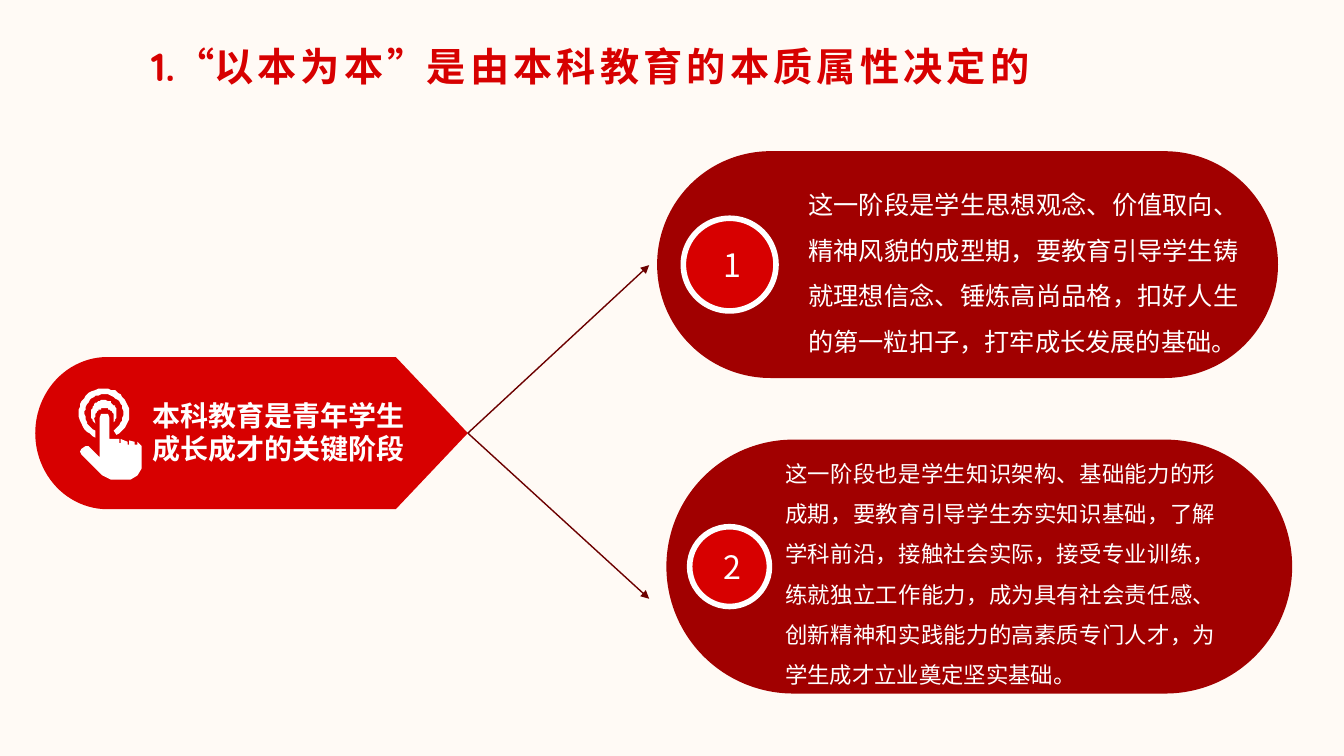
from math import cos, radians, sin

from lxml import etree
from pptx import Presentation
from pptx.dml.color import RGBColor
from pptx.enum import lang, shapes, text
from pptx.oxml import ns
from pptx.util import Pt

RED = RGBColor(0xD7, 0x00, 0x00)
DARK = RGBColor(0xA1, 0x00, 0x00)
WINE = RGBColor(0x6C, 0x00, 0x00)
WHITE = RGBColor(0xFF, 0xFF, 0xFF)
CREAM = RGBColor(0xFF, 0xFA, 0xF5)
SANS = "Noto Sans CJK SC"

FIRST = "这一阶段是学生思想观念、价值取向、精神风貌的成型期，要教育引导学生铸就理想信念、锤炼高尚品格，扣好人生的第一粒扣子，打牢成长发展的基础。"
SECOND = "这一阶段也是学生知识架构、基础能力的形成期，要教育引导学生夯实知识基础，了解学科前沿，接触社会实际，接受专业训练，练就独立工作能力，成为具有社会责任感、创新精神和实践能力的高素质专门人才，为学生成才立业奠定坚实基础。"

HAND = [
    (44.6, 42.5), (44.6, 57.6), (42.5, 63.4), (36.7, 65.5), (23, 65.5),
    (17.3, 62.6), (2.2, 48.2), (1.1, 46), (2.2, 43.9), (5, 41.8),
    (7.2, 42.5), (15.1, 50.4), (15.1, 21.6), (15.8, 19.4), (18, 18.7),
    (18.7, 18.7), (20.9, 19.4), (21.6, 21.6), (21.6, 37.4), (28.8, 37.4),
    (28.8, 40.3), (29.5, 40.3), (29.5, 37.4), (34.6, 38.9), (34.6, 41),
    (36, 41), (36, 38.2), (40.3, 38.9), (40.3, 41), (41.8, 41), (41.8, 38.9),
]


def style(para, size, color, bold=False, name=SANS, gap=0):
    font = para.font
    font.size, font.bold, font.name = Pt(size), bold, name
    font.color.rgb = color
    props = font._rPr
    if gap:
        props.set("spc", str(gap))
    etree.SubElement(props, ns.qn("a:ea")).set("typeface", SANS)


def inset(frame, left, right):
    frame.margin_left, frame.margin_right = Pt(left), Pt(right)
    frame.vertical_anchor = text.MSO_ANCHOR.MIDDLE


def paint(shape, fill, line=None):
    shape.shadow.inherit = False
    shape.fill.solid()
    shape.fill.fore_color.rgb = fill
    if line is None:
        shape.line.fill.background()
    else:
        shape.line.color.rgb = line
        shape.line.width = Pt(4)


def add_form(slide, kind, box, fill, line=None):
    form = slide.shapes.add_shape(kind, *map(Pt, box))
    paint(form, fill, line)
    return form


def arc(mid, rad, start, end, steps=40):
    turns = [radians(start + (end - start) * i / steps) for i in range(steps + 1)]
    return [(mid[0] + rad * cos(t), mid[1] + rad * sin(t)) for t in turns]


def add_title(slide, box):
    title = slide.shapes.title
    title.left, title.top, title.width, title.height = map(Pt, box)
    frame = title.text_frame
    frame.auto_size = text.MSO_AUTO_SIZE.NONE
    frame.word_wrap = True
    inset(frame, 7.2, 7.2)
    para = frame.paragraphs[0]
    para.alignment = text.PP_ALIGN.LEFT
    style(para, 28, RED, True, "Quicksand")
    parts = [("1.“", 0), ("以本为本", 300), ("”", 0), ("是由本科教育的本质属性决定的", 300)]
    for words, gap in parts:
        run = para.add_run()
        run.text = words
        run.font.language_id = lang.MSO_LANGUAGE_ID.SIMPLIFIED_CHINESE
        run.font._rPr.set("spc", str(gap))


def add_icon(slide, left, top):
    mid = (18, 18.7)
    inner = arc(mid, 9.4, 132, 399) + arc((18.4, 21.9), 6.9, 360, 180)
    outer = arc(mid, 18, 110, 419) + arc(mid, 13.7, 420, 117)
    pen = slide.shapes.build_freeform(*HAND[0], scale=Pt(1))
    pen.add_line_segments(HAND[1:])
    for ring in (inner, outer):
        pen.move_to(*ring[0])
        pen.add_line_segments(ring[1:])
    paint(pen.convert_to_shape(Pt(left), Pt(top)), WHITE)


def add_topic(slide, box):
    left, top, wide, high = box
    form = add_form(slide, shapes.MSO_SHAPE.FLOWCHART_DISPLAY, box, RED)
    form._element.spPr.xfrm.set("flipH", "1")
    add_icon(slide, left + 31, top + 21.6)
    label = slide.shapes.add_textbox(Pt(left + 75.6), Pt(top + 26), Pt(196.6), Pt(55.4))
    frame = label.text_frame
    frame.word_wrap = False
    frame.text = "本科教育是青年学生\n成长成才的关键阶段"
    for para in frame.paragraphs:
        para.alignment = text.PP_ALIGN.CENTER
        style(para, 20, WHITE, True)


def add_arrow(slide, start, end):
    line = slide.shapes.add_connector(shapes.MSO_CONNECTOR.STRAIGHT, *map(Pt, start + end))
    line.line.color.rgb = WINE
    line.line.width = Pt(1)
    etree.SubElement(line.line._get_or_add_ln(), ns.qn("a:tailEnd")).set("type", "triangle")
    etree.SubElement(line._element.spPr, ns.qn("a:effectLst"))


def add_point(slide, box, mark, words, size, disc, shift, indent):
    left, top, wide, high = box
    pill = add_form(slide, shapes.MSO_SHAPE.ROUNDED_RECTANGLE, box, DARK)
    pill.adjustments[0] = 0.5
    spot = (left + shift, top + (high - disc) / 2, disc, disc)
    badge = add_form(slide, shapes.MSO_SHAPE.OVAL, spot, RED, WHITE)
    frame = badge.text_frame
    inset(frame, 11.5, 7.2)
    frame.text = mark
    frame.paragraphs[0].alignment = text.PP_ALIGN.CENTER
    style(frame.paragraphs[0], 23, WHITE, gap=250)

    note = slide.shapes.add_textbox(Pt(left + indent), Pt(top + 0.5), Pt(319), Pt(high))
    frame = note.text_frame
    frame.word_wrap = True
    inset(frame, 11.5, 0)
    frame.text = words
    para = frame.paragraphs[0]
    para.alignment = text.PP_ALIGN.JUSTIFY
    para.line_spacing = 1.5
    style(para, size, WHITE)


def main():
    deck = Presentation()
    deck.slide_width, deck.slide_height = Pt(960), Pt(540)
    slide = deck.slides.add_slide(deck.slide_layouts[5])
    slide.background.fill.solid()
    slide.background.fill.fore_color.rgb = CREAM

    add_title(slide, (100.8, 26.6, 680.4, 41))
    add_topic(slide, (25.2, 255, 309, 108.7))
    for end in (189.4, 427.7):
        add_arrow(slide, (334.2, 309.4), (463.7, end))
    add_point(slide, (469.4, 108, 443.5, 162), "1", FIRST, 18, 66.2, 18.7, 96.5)
    add_point(slide, (476, 314, 447, 181.4), "2", SECOND, 16, 57, 16.6, 73.4)
    deck.save("out.pptx")


if __name__ == "__main__":
    main()
